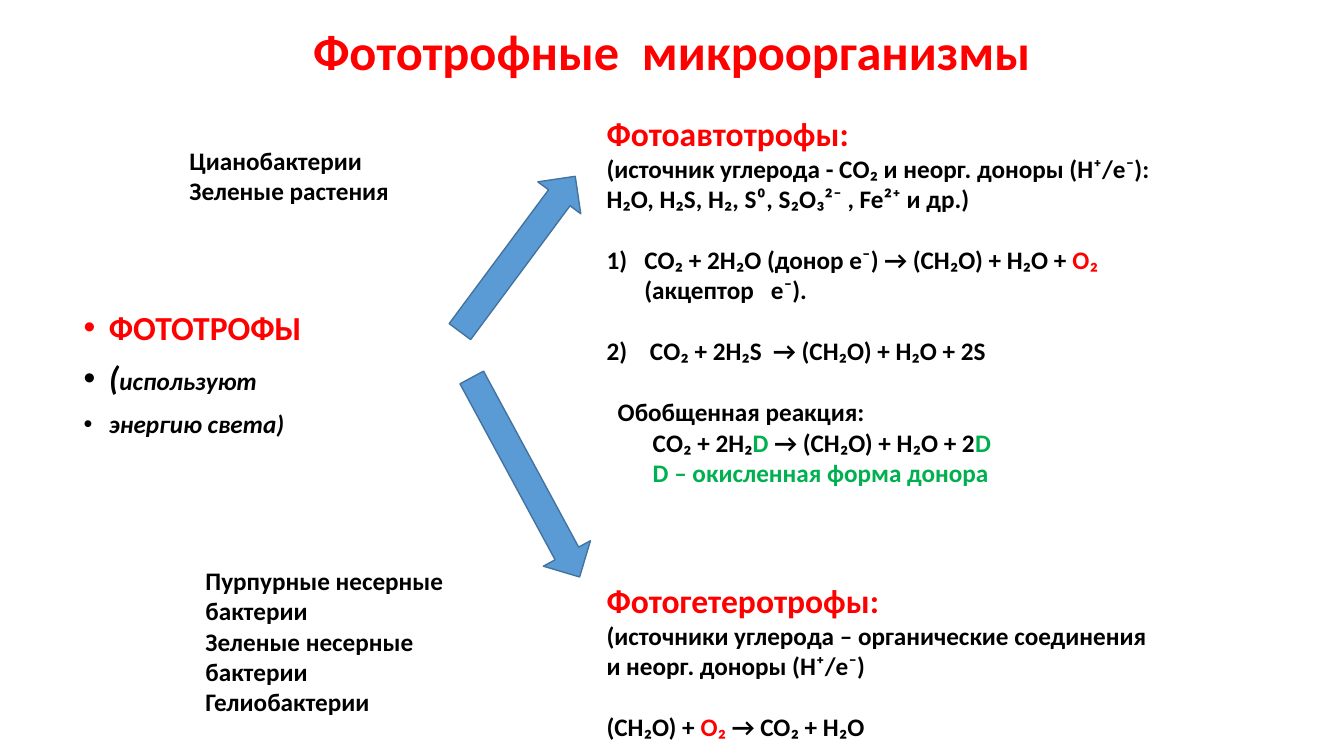
from dataclasses import dataclass

from lxml.etree import SubElement
from pptx import Presentation
from pptx.dml.color import RGBColor
from pptx.enum.shapes import MSO_SHAPE
from pptx.enum.text import MSO_ANCHOR, MSO_AUTO_SIZE, PP_ALIGN
from pptx.oxml.ns import qn
from pptx.util import Pt


@dataclass(frozen=True)
class Theme:
    font: str = "Calibri"
    black: RGBColor = RGBColor(0, 0, 0)
    red: RGBColor = RGBColor(255, 0, 0)
    green: RGBColor = RGBColor(0, 176, 80)
    arrow_fill: RGBColor = RGBColor(91, 155, 213)
    arrow_line: RGBColor = RGBColor(67, 115, 158)
    title_size: int = 36
    heading_size: int = 24
    text_size: int = 18


THEME = Theme()
LINE_GAP = 22


def place(shape, left, top, width, height):
    shape.left, shape.top = Pt(left), Pt(top)
    shape.width, shape.height = Pt(width), Pt(height)


def set_indent(paragraph, margin, hanging=0):
    properties = paragraph._p.get_or_add_pPr()
    properties.set("marL", str(Pt(margin)))
    properties.set("indent", str(Pt(-hanging)))
    return properties


def number_paragraph(paragraph, number, margin):
    properties = set_indent(paragraph, margin, margin)
    numbering = SubElement(properties, qn("a:buAutoNum"))
    numbering.set("type", "arabicParenR")
    numbering.set("startAt", str(number))


def write_paragraph(frame, runs, size=THEME.text_size, color=THEME.black,
                    before=0, margin=0, number=None):
    paragraph = frame.paragraphs[0]
    if paragraph.runs:
        paragraph = frame.add_paragraph()
    if number:
        number_paragraph(paragraph, number, margin)
    elif margin:
        set_indent(paragraph, margin)
    paragraph.space_before = Pt(before)
    font = paragraph.font
    font.name, font.size, font.bold = THEME.font, Pt(size), True
    font.color.rgb = color
    for text, run_color in [(runs, None)] if isinstance(runs, str) else runs:
        run = paragraph.add_run()
        run.text = text
        if run_color is not None:
            run.font.color.rgb = run_color
    return paragraph


def add_text_box(slide, left, top, width, height):
    shape = slide.shapes.add_textbox(Pt(left), Pt(top), Pt(width), Pt(height))
    shape.text_frame.word_wrap = True
    return shape.text_frame


def add_arrow(slide, kind, left, top, width, height, rotation):
    arrow = slide.shapes.add_shape(kind, Pt(left), Pt(top), Pt(width), Pt(height))
    arrow.rotation = rotation
    arrow.shadow.inherit = False
    arrow.fill.solid()
    arrow.fill.fore_color.rgb = THEME.arrow_fill
    arrow.line.color.rgb = THEME.arrow_line
    arrow.line.width = Pt(1)


def add_title(slide):
    title = slide.shapes.title
    place(title, 156, 0, 648, 77)
    frame = title.text_frame
    frame.auto_size = MSO_AUTO_SIZE.NONE
    frame.vertical_anchor = MSO_ANCHOR.MIDDLE
    paragraph = write_paragraph(frame, "Фототрофные  микроорганизмы",
                                THEME.title_size, THEME.red)
    paragraph.alignment = PP_ALIGN.CENTER
    paragraph.line_spacing = 0.9


def add_phototrophs(slide):
    body = slide.placeholders[1]
    place(body, 52.6, 66.2, 878.4, 459.4)
    frame = body.text_frame
    frame.auto_size = MSO_AUTO_SIZE.NONE
    frame.vertical_anchor = MSO_ANCHOR.TOP
    frame.margin_top = Pt(156)
    write_paragraph(frame, "ФОТОТРОФЫ", THEME.heading_size, THEME.red)
    opening = write_paragraph(frame, [("(", None), ("используют", None)],
                              THEME.heading_size, before=10)
    opening.runs[1].font.size = Pt(THEME.text_size)
    closing = write_paragraph(frame, "энергию света)", before=10)
    opening.font.italic = closing.font.italic = True
    for paragraph in frame.paragraphs:
        set_indent(paragraph, 18, 18)
        paragraph.line_spacing = 0.9


def add_reactions(slide):
    frame = add_text_box(slide, 426.2, 77, 410.4, 479.5)
    write_paragraph(frame, "Фотоавтотрофы:", THEME.heading_size, THEME.red)
    write_paragraph(frame, "(источник углерода - СО₂ и неорг. доноры (Н⁺/е⁻): "
                           "H₂O, H₂S, H₂, S⁰, S₂O₃²⁻ , Fe²⁺ и др.)")
    write_paragraph(frame, [("СO₂ + 2H₂O (донор е⁻) → (CH₂O) + H₂O + ", None),
                            ("O₂ ", THEME.red), ("(акцептор   е⁻).", None)],
                    before=LINE_GAP, margin=27, number=1)
    write_paragraph(frame, "СО₂ + 2H₂S  → (СH₂O) + H₂O + 2S",
                    before=LINE_GAP, margin=31, number=2)
    write_paragraph(frame, "Обобщенная реакция:", before=LINE_GAP, margin=8)
    write_paragraph(frame, [("СО₂ + 2Н₂", None), ("D", THEME.green),
                            (" → (CH₂O) + H₂O + 2", None), ("D", THEME.green)],
                    margin=33)
    write_paragraph(frame, "D – окисленная форма донора",
                    color=THEME.green, margin=33)
    write_paragraph(frame, "Фотогетеротрофы:", THEME.heading_size, THEME.red,
                    before=3 * LINE_GAP)
    write_paragraph(frame, "(источники углерода – органические соединения "
                           "и неорг. доноры (Н⁺/е⁻)")
    write_paragraph(frame, [("(CH₂O) + ", None), ("O₂", THEME.red),
                            (" → CO₂ + H₂O", None)], before=LINE_GAP)


def add_organisms(slide, left, top, width, height, names):
    frame = add_text_box(slide, left, top, width, height)
    for name in names:
        write_paragraph(frame, name)


def main():
    presentation = Presentation()
    presentation.slide_width, presentation.slide_height = Pt(960), Pt(540)
    slide = presentation.slides.add_slide(presentation.slide_layouts[1])
    add_title(slide)
    add_phototrophs(slide)
    add_arrow(slide, MSO_SHAPE.UP_ARROW, 350.6, 112.3, 38.2, 138.2, 36.6)
    add_arrow(slide, MSO_SHAPE.DOWN_ARROW, 356.4, 259.9, 38.2, 162, 331.6)
    add_reactions(slide)
    add_organisms(slide, 128.2, 100.1, 241.2, 51.1,
                  ["Цианобактерии", "Зеленые растения"])
    add_organisms(slide, 139.7, 400.3, 215.3, 116.6,
                  ["Пурпурные несерные бактерии",
                   "Зеленые несерные  бактерии", "Гелиобактерии"])
    presentation.save("out.pptx")


if __name__ == "__main__":
    main()
